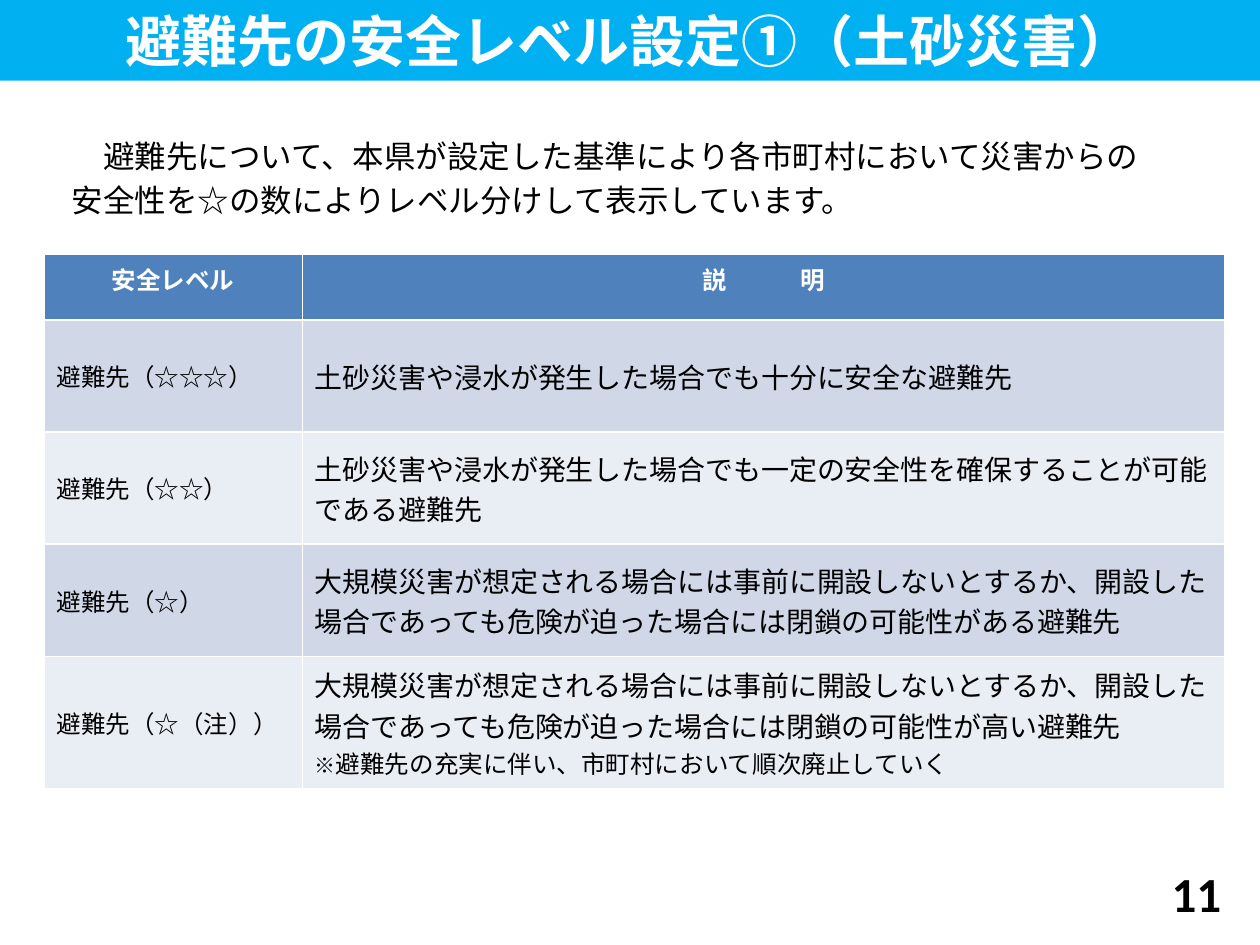
from lxml.etree import SubElement
from pptx import Presentation
from pptx.dml.color import RGBColor
from pptx.enum.text import MSO_ANCHOR as Anchor, PP_ALIGN as Align
from pptx.oxml.ns import qn
from pptx.util import Inches, Pt

SKY = RGBColor(0x00, 0xB0, 0xF0)
BLUE = RGBColor(0x4F, 0x81, 0xBD)
BANDS = RGBColor(0xD0, 0xD8, 0xE8), RGBColor(0xE9, 0xED, 0xF4)
WHITE = RGBColor(0xFF, 0xFF, 0xFF)
BLACK = RGBColor(0x00, 0x00, 0x00)
NOTO = "Noto Sans CJK JP"
LATIN = "Calibri"

RISK = "大規模災害が想定される場合には事前に開設しないとするか、開設した場合であっても危険が迫った場合には閉鎖の可能性が"
LEVELS = [
    ("避難先（☆☆☆）", "土砂災害や浸水が発生した場合でも十分に安全な避難先"),
    ("避難先（☆☆）", "土砂災害や浸水が発生した場合でも一定の安全性を確保することが可能である避難先"),
    ("避難先（☆）", RISK + "ある避難先"),
    ("避難先（☆（注））", RISK + "高い避難先"),
]


class Deck:
    """Holds the style and the current slide, and adds each kind of element."""

    def __init__(self):
        self.show = Presentation()
        self.show.slide_width, self.show.slide_height = Inches(10), Inches(7.5)
        self.slide = self.show.slides.add_slide(self.show.slide_layouts[5])

    def style(self, para, size, color=BLACK, bold=False, face=NOTO, align=Align.LEFT):
        para.alignment = align
        font = para.font
        font.size, font.bold, font.name = Pt(size), bold, face
        font.color.rgb = color
        props = para._p.get_or_add_pPr().get_or_add_defRPr()
        SubElement(props, qn("a:ea")).set("typeface", NOTO)

    def title(self, text):
        shape = self.slide.shapes.title
        shape.left, shape.top = Inches(0), Inches(0)
        shape.width, shape.height = Inches(10), Inches(0.64)
        shape.fill.solid()
        shape.fill.fore_color.rgb = SKY
        frame = shape.text_frame
        frame.margin_top = frame.margin_bottom = 0
        frame.vertical_anchor = Anchor.MIDDLE
        frame.text = text
        self.style(frame.paragraphs[0], 32, WHITE, True, align=Align.CENTER)

    def text(self, box, lines, size, inset=0.05, pitch=None, anchor=Anchor.TOP, **look):
        frame = self.slide.shapes.add_textbox(*map(Inches, box)).text_frame
        frame.word_wrap = True
        frame.margin_top = Inches(inset)
        frame.vertical_anchor = anchor
        frame.text = "\n".join(lines)
        for para in frame.paragraphs:
            self.style(para, size, **look)
            if pitch:
                para.line_spacing = Pt(pitch)

    def cell(self, cell, text, size, fill, anchor=Anchor.MIDDLE, **look):
        cell.fill.solid()
        cell.fill.fore_color.rgb = fill
        cell.vertical_anchor = anchor
        cell.text = text
        self.style(cell.text_frame.paragraphs[0], size, **look)

    def table(self, box, cols, rows, heads, levels):
        shape = self.slide.shapes.add_table(len(rows), len(cols), *map(Inches, box))
        grid = shape.table
        for col, width in zip(grid.columns, cols):
            col.width = Inches(width)
        for row, height in zip(grid.rows, rows):
            row.height = Inches(height)
        for col, head in enumerate(heads):
            self.cell(grid.cell(0, col), head, 14, BLUE, Anchor.TOP, color=WHITE,
                      bold=True, face=LATIN, align=Align.CENTER)
        for row, (name, note) in enumerate(levels, 1):
            fill = BANDS[(row - 1) % 2]
            self.cell(grid.cell(row, 0), name, 14, fill)
            self.cell(grid.cell(row, 1), note, 16, fill)
        return grid

    def spread(self, cell, text, gap):
        para = cell.text_frame.paragraphs[0]
        run = para.add_run()
        run.text = text
        para.runs[0]._r.get_or_add_rPr().set("spc", str(gap * 100))

    def remark(self, cell, mark, text):
        para = cell.text_frame.add_paragraph()
        self.style(para, 14)
        for part in mark, text:
            para.add_run().text = part
        para.runs[0].font.size = Pt(12)


def main():
    deck = Deck()
    deck.title("避難先の安全レベル設定①（土砂災害）")
    deck.text((0.47, 0.66, 9, 5.94), [
        "　避難先について、本県が設定した基準により各市町村において災害からの",
        "安全性を☆の数によりレベル分けして表示しています。",
    ], 18, inset=0.38, pitch=25)
    grid = deck.table((0.35, 2.02, 9.37, 4.25), (2.05, 7.32),
                      (0.52, 0.89, 0.89, 0.89, 1.05), ("安全レベル", "説"), LEVELS)
    deck.spread(grid.cell(0, 1), "明", 42)
    deck.remark(grid.cell(4, 1), "※", "避難先の充実に伴い、市町村において順次廃止していく")
    deck.text((7.46, 6.89, 2.33, 0.4), ["11"], 28, anchor=Anchor.MIDDLE,
              bold=True, face=LATIN, align=Align.RIGHT)
    deck.show.save("out.pptx")


if __name__ == "__main__":
    main()
